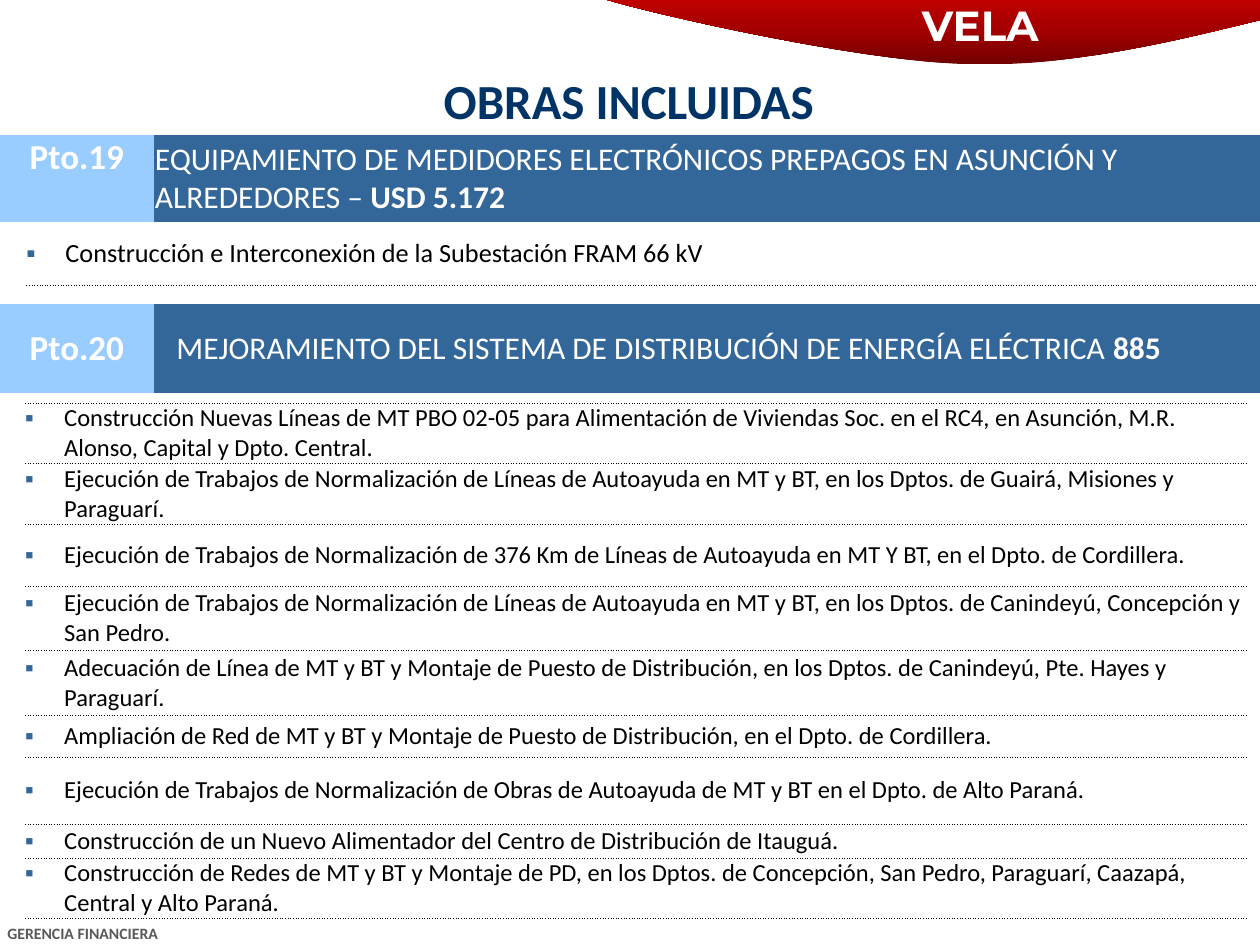
from copy import deepcopy

from lxml import etree
from pptx import Presentation
from pptx import util as u
from pptx.dml.color import RGBColor
from pptx.enum import text
from pptx.oxml import ns

WHITE = RGBColor(0xFF, 0xFF, 0xFF)
BLACK = RGBColor(0, 0, 0)
NAVY = RGBColor(0x00, 0x33, 0x66)
BLUE = RGBColor(0x33, 0x66, 0x99)
LIGHT_BLUE = RGBColor(0x99, 0xCC, 0xFF)
GREY = RGBColor(0x59, 0x59, 0x59)
DARK_RED = RGBColor(0x72, 0, 0)
MIDDLE_RED = RGBColor(0xA2, 0, 0)
RED = RGBColor(0xC0, 0, 0)
PLAIN_TABLE_STYLE = "{2D5ABB26-0587-4C30-8999-92F81FD0307C}"

TITLE = "OBRAS INCLUIDAS"
LABELS = [
    ("VELA", (7.13, -0.05, 1.3, 0.5), "Montserrat", 24, WHITE, text.PP_ALIGN.CENTER),
    ("GERENCIA FINANCIERA", (-0.04, 7.28, 3.46, 0.25), "Calibri", 9, GREY, text.PP_ALIGN.LEFT),
]
HEADERS = [
    {"point": "Pto.19", "name": "EQUIPAMIENTO DE MEDIDORES ELECTRÓNICOS PREPAGOS EN ASUNCIÓN Y ALREDEDORES – ",
     "amount": "USD 5.172", "top": 1.07, "height": 0.69, "indent": 0.01, "anchor": text.MSO_ANCHOR.TOP},
    {"point": "Pto.20", "name": "MEJORAMIENTO DEL SISTEMA DE DISTRIBUCIÓN DE ENERGÍA ELÉCTRICA ",
     "amount": "885", "top": 2.41, "height": 0.71, "indent": 0.18, "anchor": text.MSO_ANCHOR.MIDDLE},
]
HEADER_COLUMNS = (1.22, 8.81)
WORKS = [
    {"left": 0.21, "top": 1.76, "width": 9.76, "size": 15, "sides": "B", "rows": [
        (0.5, "Construcción e Interconexión de la Subestación FRAM 66 kV"),
    ]},
    {"left": 0.2, "top": 3.2, "width": 9.69, "size": 14, "sides": "TB", "rows": [
        (0.48, "Construcción Nuevas Líneas de MT PBO 02-05 para Alimentación de Viviendas Soc. en el RC4, en Asunción, M.R. Alonso, Capital y Dpto. Central."),
        (0.48, "Ejecución de Trabajos de Normalización de Líneas de Autoayuda en MT y BT, en los Dptos. de Guairá, Misiones y Paraguarí."),
        (0.49, "Ejecución de Trabajos de Normalización de 376 Km de Líneas de Autoayuda en MT Y BT, en el Dpto. de Cordillera."),
        (0.51, "Ejecución de Trabajos de Normalización de Líneas de Autoayuda en MT y BT, en los Dptos. de Canindeyú, Concepción y San Pedro."),
        (0.52, "Adecuación de Línea de MT y BT y Montaje de Puesto de Distribución, en los Dptos. de Canindeyú, Pte. Hayes y Paraguarí."),
        (0.33, "Ampliación de Red de MT y BT y Montaje de Puesto de Distribución, en el Dpto. de Cordillera."),
        (0.53, "Ejecución de Trabajos de Normalización de Obras de Autoayuda de MT y BT en el Dpto. de Alto Paraná."),
        (0.27, "Construcción de un Nuevo Alimentador del Centro de Distribución de Itauguá."),
        (0.48, "Construcción de Redes de MT y BT y Montaje de PD, en los Dptos. de Concepción, San Pedro, Paraguarí, Caazapá, Central y Alto Paraná."),
    ]},
]
BANNER_START = (4.79, -0.01)
BANNER_CURVES = [
    ((5.09, 0.09), (6.82, 0.49), (7.69, 0.51)),
    ((8.56, 0.54), (9.61, 0.25), (10, 0.16)),
]
CURVE_STEPS = 24


def add_child(parent, tag, **attributes):
    return etree.SubElement(parent, ns.qn(tag), attributes)


def set_font(paragraph, name, size, color, bold=None):
    font = paragraph.font
    font.name, font.size, font.bold = name, u.Pt(size), bold
    font.color.rgb = color


def curve_point(points, t):
    weights = ((1 - t) ** 3, 3 * t * (1 - t) ** 2, 3 * t * t * (1 - t), t ** 3)
    return tuple(sum(w * p[axis] for w, p in zip(weights, points)) for axis in (0, 1))


def add_banner(slide):
    outline, start = [BANNER_START], BANNER_START
    for curve in BANNER_CURVES:
        outline += [curve_point((start, *curve), step / CURVE_STEPS)
                    for step in range(1, CURVE_STEPS + 1)]
        start = curve[-1]
    outline.append((10, 0))
    corners = [(u.Inches(x), u.Inches(y)) for x, y in outline]
    builder = slide.shapes.build_freeform(*corners[0])
    builder.add_line_segments(corners[1:], close=True)
    shape = builder.convert_to_shape()
    shape.shadow.inherit = False
    shape.line.fill.background()
    shape.fill.gradient()
    shape.fill.gradient_angle = 90
    first = next(shape._element.iter(ns.qn("a:gs")))
    first.addnext(deepcopy(first))
    for stop, position, color in zip(shape.fill.gradient_stops, (0, 0.5, 1),
                                     (DARK_RED, MIDDLE_RED, RED)):
        stop.position, stop.color.rgb = position, color


def add_table(slide, left, top, columns, rows):
    frame = slide.shapes.add_table(len(rows), len(columns), u.Inches(left), u.Inches(top),
                                   u.Inches(sum(columns)), u.Inches(sum(rows)))
    next(frame._element.iter(ns.qn("a:tableStyleId"))).text = PLAIN_TABLE_STYLE
    table = frame.table
    table.first_row = table.horz_banding = False
    for column, width in zip(table.columns, columns):
        column.width = u.Inches(width)
    for row, height in zip(table.rows, rows):
        row.height = u.Inches(height)
    return table


def format_cell(cell, color, margin, anchor=text.MSO_ANCHOR.MIDDLE):
    cell.margin_left = cell.margin_right = cell.margin_top = u.Inches(margin)
    cell.margin_bottom = 0
    cell.vertical_anchor = anchor
    cell.fill.solid()
    cell.fill.fore_color.rgb = color


def add_header(slide, header):
    table = add_table(slide, 0, header["top"], HEADER_COLUMNS, [header["height"]])
    point, name = table.cell(0, 0), table.cell(0, 1)
    format_cell(point, LIGHT_BLUE, 0.01, header["anchor"])
    format_cell(name, BLUE, 0.01)
    name.margin_left = u.Inches(header["indent"])
    paragraph = point.text_frame.paragraphs[0]
    paragraph.text = header["point"]
    paragraph.alignment = text.PP_ALIGN.CENTER
    set_font(paragraph, "Calibri", 20, WHITE, True)
    paragraph = name.text_frame.paragraphs[0]
    set_font(paragraph, "Calibri", 18, WHITE)
    for words, bold in ((header["name"], False), (header["amount"], True)):
        run = paragraph.add_run()
        run.text, run.font.bold = words, bold


def add_dotted_borders(cell, sides):
    properties = cell._tc.get_or_add_tcPr()
    for side in sides:
        line = add_child(properties, f"a:ln{side}", w=str(u.Pt(0.25)))
        add_child(add_child(line, "a:solidFill"), "a:srgbClr", val=str(BLACK))
        add_child(line, "a:prstDash", val="sysDot")


def add_bullet(paragraph):
    properties = paragraph._p.get_or_add_pPr()
    properties.set("marL", str(u.Inches(0.31)))
    properties.set("indent", str(-u.Inches(0.31)))
    add_child(add_child(properties, "a:buClr"), "a:srgbClr", val=str(BLUE))
    add_child(properties, "a:buFont", typeface="Calibri")
    add_child(properties, "a:buChar", char="▪")


def add_works(slide, group):
    heights = [height for height, _ in group["rows"]]
    table = add_table(slide, group["left"], group["top"], [group["width"]], heights)
    for index, (_, work) in enumerate(group["rows"]):
        cell = table.cell(index, 0)
        add_dotted_borders(cell, group["sides"])
        format_cell(cell, WHITE, 0)
        paragraph = cell.text_frame.paragraphs[0]
        paragraph.text = work
        add_bullet(paragraph)
        set_font(paragraph, "Calibri", group["size"], BLACK)


def add_label(slide, words, box, font, size, color, alignment):
    frame = slide.shapes.add_textbox(*map(u.Inches, box)).text_frame
    frame.word_wrap = True
    paragraph = frame.paragraphs[0]
    paragraph.text, paragraph.alignment = words, alignment
    set_font(paragraph, font, size, color, True)


def format_title(title):
    title.left, title.top, title.width, title.height = map(u.Inches, (0, 0.52, 9.98, 0.55))
    title.text_frame.text = TITLE
    title.text_frame.vertical_anchor = text.MSO_ANCHOR.MIDDLE
    paragraph = title.text_frame.paragraphs[0]
    paragraph.alignment = text.PP_ALIGN.CENTER
    set_font(paragraph, "Calibri", 28, NAVY, True)


def main():
    presentation = Presentation()
    presentation.slide_width, presentation.slide_height = u.Inches(10), u.Inches(7.5)
    slide = presentation.slides.add_slide(presentation.slide_layouts[5])
    format_title(slide.shapes.title)
    add_banner(slide)
    for label in LABELS:
        add_label(slide, *label)
    for header, group in zip(HEADERS, WORKS):
        add_header(slide, header)
        add_works(slide, group)
    presentation.save("out.pptx")


if __name__ == "__main__":
    main()
